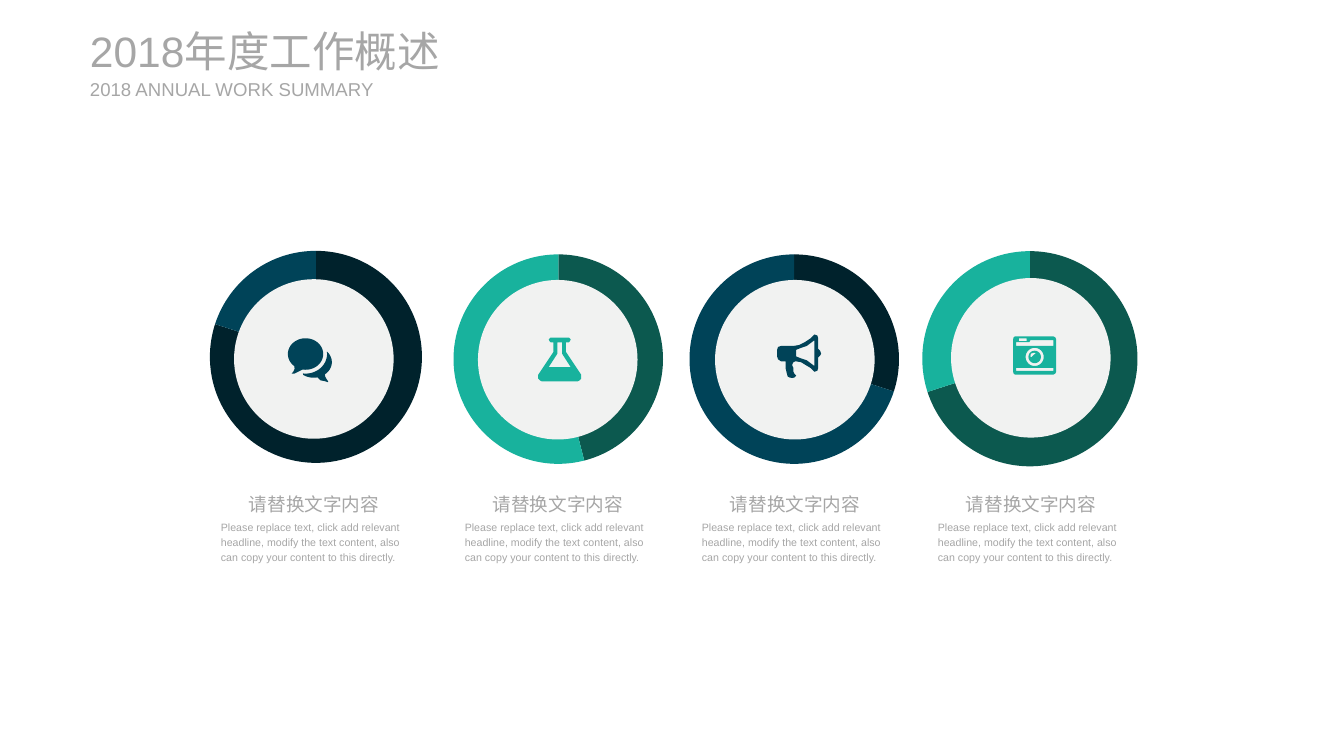
from dataclasses import dataclass
from math import cos, radians, sin

from lxml import etree
from pptx import Presentation
from pptx.chart.data import CategoryChartData
from pptx.dml.color import RGBColor
from pptx.enum.chart import XL_CHART_TYPE
from pptx.enum.shapes import MSO_SHAPE
from pptx.enum.text import MSO_ANCHOR, MSO_AUTO_SIZE, PP_ALIGN
from pptx.oxml.ns import qn
from pptx.shapes.base import BaseShape
from pptx.slide import Slide
from pptx.util import Cm, Pt

PIE = XL_CHART_TYPE.PIE
OVAL = MSO_SHAPE.OVAL
TOP, MIDDLE = MSO_ANCHOR.TOP, MSO_ANCHOR.MIDDLE
FIXED = MSO_AUTO_SIZE.NONE
LEFT, CENTER = PP_ALIGN.LEFT, PP_ALIGN.CENTER

BLACK = RGBColor(0x00, 0x00, 0x00)
GREY = RGBColor(0xA6, 0xA6, 0xA6)
PALE = RGBColor(0xF1, 0xF2, 0xF1)
NAVY = RGBColor(0x00, 0x43, 0x58)
INK = RGBColor(0x00, 0x22, 0x2C)
TEAL = RGBColor(0x18, 0xB2, 0x9D)
PINE = RGBColor(0x0C, 0x59, 0x4F)

FONT = "Arial"
HEAD = "请替换文字内容"
BODY = ("Please replace text, click add relevant headline, modify the text "
        "content, also can copy your content to this directly.")
DISC = 4.24
UNIT = Cm(2.54) / 100  # icon grid step

Point = tuple[float, float]
Outline = list[Point]


def arc(x: float, y: float, wide: float, high: float,
        start: int = 0, end: int = 360) -> Outline:
    """Points on an ellipse, angles in degrees, clockwise from the right."""
    steps = 40
    turns = [radians(start + (end - start) * i / steps) for i in range(steps + 1)]
    return [(x + wide * cos(t), y + high * sin(t)) for t in turns]


def box(left: float, top: float, right: float, low: float) -> Outline:
    return [(left, top), (right, top), (right, low), (left, low)]


CHAT = [
    arc(18.5, 16.5, 18.5, 16.5, 129, 460) + [(7, 37), (4, 37), (6, 34.5), (7, 32)],
    arc(27, 25, 19, 16.3, -42, 52)
    + [(39, 40), (40, 42), (42, 45), (42, 46), (39, 45), (34, 44)]
    + arc(27, 25, 19, 16.3, 78, 125)
    + arc(18.5, 16.5, 22.5, 20.5, 97, -7),
]
FLASK = [
    [(45, 39), (45, 43), (43, 45), (41, 46), (4, 46), (2, 45), (0, 43), (0, 39),
     (16, 15), (16, 5), (13, 5), (12, 4), (11, 2), (12, 1), (13, 0), (32, 0),
     (33, 1), (34, 2), (33, 4), (32, 5), (29, 5), (29, 15)],
    [(11, 31), (34, 31), (25, 17), (25, 5), (20, 5), (20, 17)],
]
HORN = [
    [(46, 20), (45, 22), (43, 24), (43, 35), (42, 38), (39, 39), (35, 35),
     (30, 32), (25, 29), (19, 28), (17, 29), (16, 31), (16, 33), (17, 35),
     (17, 39), (18, 41), (20, 43), (18, 45), (16, 45.5), (13, 45), (11, 44),
     (10, 40), (9, 36), (9, 28), (4, 28), (1, 26), (0, 23), (0, 16), (1, 13),
     (4, 12), (17, 12), (23, 11), (29, 8), (35, 4), (39, 0), (42, 1), (43, 4),
     (43, 15), (45, 17)],
    [(39, 6), (35, 9), (31, 12), (25, 14), (20, 16), (20, 23), (25, 25),
     (31, 27), (35, 30), (39, 33)],
]
CAMERA = [
    [(2, 0), (42, 0), (44, 1), (45, 3), (45, 37), (44, 39), (42, 40), (2, 40),
     (0.5, 39), (0, 37), (0, 3), (0.5, 1)],
    [(42, 4), (18, 4), (17, 6), (3, 6), (3, 10), (42, 10)],
    box(3, 33, 42, 36),
    box(6, 2, 14, 5),
    arc(22.5, 21.5, 9.5, 9.5),
    arc(22.5, 21.5, 6.5, 6.5),
    [(18, 21), (18.5, 18), (22, 17), (24, 18), (22, 19), (20, 21), (19, 22)],
]


@dataclass
class Dial:
    """One ring with its icon and text; places and sizes in cm."""
    pie: tuple[float, float, float]  # left, top, size
    disc: Point
    icon: Point
    shares: tuple[int, int]
    tones: tuple[RGBColor, RGBColor]
    art: list[Outline]
    tint: RGBColor


DIALS = [
    Dial((5.08, 6.17, 6.63), (6.22, 7.42), (7.65, 8.99), (80, 20), (INK, NAVY), CHAT, NAVY),
    Dial((11.56, 6.27, 6.55), (12.7, 7.44), (14.3, 8.97), (46, 54), (PINE, TEAL), FLASK, TEAL),
    Dial((17.83, 6.27, 6.55), (19, 7.44), (20.65, 8.89), (30, 70), (INK, NAVY), HORN, NAVY),
    Dial((24, 6.17, 6.73), (25.27, 7.39), (26.92, 8.94), (70, 30), (PINE, TEAL), CAMERA, TEAL),
]


def write(shape: BaseShape, text: str, *, size: int, align: PP_ALIGN = LEFT,
          anchor: MSO_ANCHOR = MIDDLE, line: float = 1.0, before: int = 0) -> None:
    frame = shape.text_frame
    frame.word_wrap = True
    frame.auto_size = FIXED
    frame.vertical_anchor = anchor
    frame.margin_left = frame.margin_right = 0
    frame.margin_top = frame.margin_bottom = 0
    para = frame.paragraphs[0]
    para.alignment = align
    para.line_spacing = line
    para.space_before = Pt(before)
    run = para.add_run()
    run.text = text
    run.font.name = FONT
    run.font.size = Pt(size)
    run.font.color.rgb = GREY


def add_text(slide: Slide, left: float, top: float, width: float, height: float) -> BaseShape:
    return slide.shapes.add_textbox(Cm(left), Cm(top), Cm(width), Cm(height))


def paint(shape: BaseShape, tint: RGBColor) -> None:
    shape.shadow.inherit = False
    shape.fill.solid()
    shape.fill.fore_color.rgb = tint
    shape.line.fill.background()


def add_pie(slide: Slide, dial: Dial) -> None:
    data = CategoryChartData()
    data.categories = ["1", "2"]
    data.add_series("Series 1", dial.shares)
    left, top, size = map(Cm, dial.pie)
    chart = slide.shapes.add_chart(PIE, left, top, size, size, data).chart
    chart.has_legend = chart.has_title = False
    chart.font.name = FONT
    chart.font.size = Pt(30)
    chart.font.color.rgb = BLACK
    plot = chart.plots[0]
    plot.vary_by_categories = False
    for i, tone in enumerate(dial.tones):
        look = plot.series[0].points[i].format
        look.fill.solid()
        look.fill.fore_color.rgb = tone
        look.line.fill.background()
    area = chart.element.find(".//" + qn("c:plotArea"))
    for old in area.findall(qn("c:layout")):
        area.remove(old)
    layout = etree.Element(qn("c:layout"))
    area.insert(0, layout)
    manual = etree.SubElement(layout, qn("c:manualLayout"))
    for tag, value in (("layoutTarget", "inner"), ("xMode", "edge"), ("yMode", "edge"),
                       ("x", "0.075"), ("y", "0"), ("w", "0.85"), ("h", "1")):
        etree.SubElement(manual, qn("c:" + tag)).set("val", value)


def add_icon(slide: Slide, dial: Dial) -> None:
    pen = None
    for outline in dial.art:
        first, *rest = [(x * UNIT, y * UNIT) for x, y in outline]
        if pen is None:
            pen = slide.shapes.build_freeform(*first)
        else:
            pen.move_to(*first)
        pen.add_line_segments(rest, close=True)
    paint(pen.convert_to_shape(*map(Cm, dial.icon)), dial.tint)


def add_dial(slide: Slide, dial: Dial) -> None:
    add_pie(slide, dial)
    left, top = dial.disc
    disc = slide.shapes.add_shape(OVAL, Cm(left), Cm(top), Cm(DISC), Cm(DISC))
    paint(disc, PALE)
    add_icon(slide, dial)
    edge = left - 0.35
    write(add_text(slide, edge, 13.08, 4.95, 0.61), HEAD, size=14, align=CENTER)
    write(add_text(slide, edge, 13.77, 4.95, 1.19), BODY, size=8, anchor=TOP,
          line=1.2, before=8)


def main() -> None:
    deck = Presentation()
    deck.slide_width, deck.slide_height = Cm(35.71), Cm(20.09)
    slide = deck.slides.add_slide(deck.slide_layouts[5])
    title = slide.shapes.title
    title.left, title.top = Cm(2.39), Cm(0.66)
    title.width, title.height = Cm(10.97), Cm(1.37)
    write(title, "2018年度工作概述", size=32)
    write(add_text(slide, 2.39, 2.06, 7.8, 0.61), "2018 ANNUAL WORK SUMMARY", size=14)
    for dial in DIALS:
        add_dial(slide, dial)
    deck.save("out.pptx")


if __name__ == "__main__":
    main()
